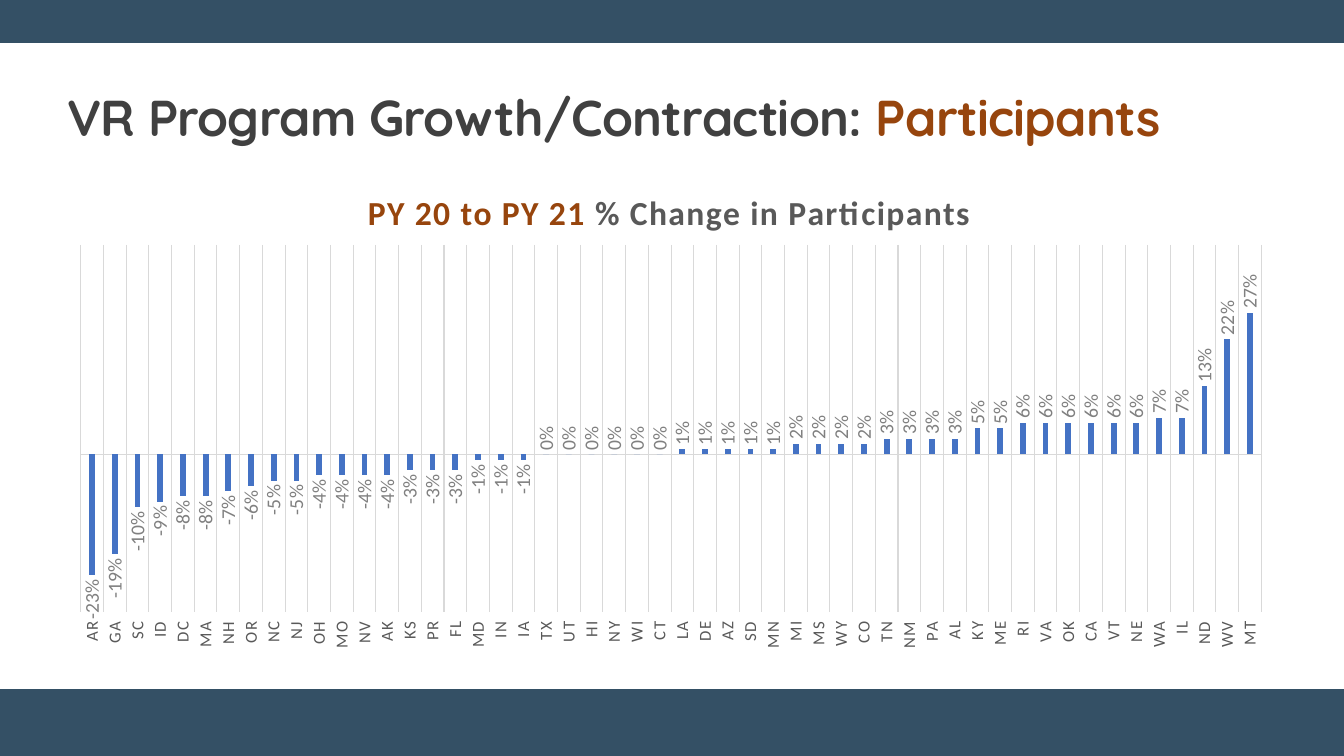
from lxml import etree
from pptx import Presentation
from pptx.chart.data import CategoryChartData
from pptx.dml.color import RGBColor
from pptx.enum.chart import XL_CHART_TYPE, XL_LABEL_POSITION, XL_TICK_LABEL_POSITION, XL_TICK_MARK
from pptx.enum.shapes import MSO_SHAPE
from pptx.oxml.ns import qn
from pptx.util import Pt

COLUMNS = XL_CHART_TYPE.COLUMN_CLUSTERED
OUTSIDE_END = XL_LABEL_POSITION.OUTSIDE_END
LOW = XL_TICK_LABEL_POSITION.LOW
NO_TICK = XL_TICK_MARK.NONE
RECTANGLE = MSO_SHAPE.RECTANGLE

COLORS = {"band": "345065", "heading": "404040", "accent": "97450D", "text": "595959",
          "label": "808080", "grid": "D9D9D9", "bar": "4472C4", "black": "000000"}
WIDTH, HEIGHT = 960, 540

STATES = ("AR GA SC ID DC MA NH OR NC NJ OH MO NV AK KS PR FL MD IN IA TX UT HI NY WI CT "
          "LA DE AZ SD MN MI MS WY CO TN NM PA AL KY ME RI VA OK CA VT NE WA IL ND WV MT").split()
PERCENT_CHANGES = [-23, -19, -10, -9, -8, -8, -7, -6, -5, -5, -4, -4, -4, -4, -3, -3, -3,
                   -1, -1, -1, 0, 0, 0, 0, 0, 0, 1, 1, 1, 1, 1, 2, 2, 2, 2, 3, 3, 3, 3,
                   5, 5, 6, 6, 6, 6, 6, 6, 7, 7, 13, 22, 27]


def color(name):
    return RGBColor.from_string(COLORS[name])


def style_font(font, color_name, **values):
    for attribute, value in values.items():
        setattr(font, attribute, value)
    font.color.rgb = color(color_name)


def add_runs(paragraph, parts, spacing, **values):
    for words, color_name in parts:
        run = paragraph.add_run()
        run.text = words
        style_font(run.font, color_name, bold=True, **values)
        run.font._element.set("spc", str(spacing))


def style_line(line, color_name, width):
    line.color.rgb = color(color_name)
    line.width = Pt(width)


def make_layout(**fractions):
    """Manual chart layout; fractions are of the chart's size."""
    layout = etree.Element(qn("c:layout"))
    manual = etree.SubElement(layout, qn("c:manualLayout"))
    for tag, value in fractions.items():
        etree.SubElement(manual, qn("c:" + tag)).set("val", str(value))
    return layout


def turn_upright(element):
    body = element.find(qn("c:txPr")).find(qn("a:bodyPr"))
    body.set("rot", "-5400000")
    body.set("vert", "horz")


def add_band(slide, left, top, width, height):
    band = slide.shapes.add_shape(RECTANGLE, Pt(left), Pt(top), Pt(width), Pt(height))
    band.shadow.inherit = False
    band.fill.solid()
    band.fill.fore_color.rgb = color("band")
    style_line(band.line, "band", 1)


def add_heading(slide, left, top, width, height):
    frame = slide.shapes.add_textbox(Pt(left), Pt(top), Pt(width), Pt(height)).text_frame
    frame.word_wrap = True
    frame.margin_top = Pt(44)
    heading = frame.paragraphs[0]
    heading.line_spacing = 0.9
    add_runs(heading, [("VR Program Growth/Contraction: ", "heading"),
                       ("Participants", "accent")], -50, size=Pt(36), name="Quicksand")


def add_change_chart(slide, left, top, width, height):
    data = CategoryChartData(number_format="0%")
    data.categories = STATES
    data.add_series("Series 1", [percent / 100 for percent in PERCENT_CHANGES])
    chart = slide.shapes.add_chart(COLUMNS, Pt(left), Pt(top), Pt(width), Pt(height), data).chart
    chart.has_legend = False
    style_font(chart.font, "black", size=Pt(10), name="Calibri")

    # Title
    title = chart.chart_title
    add_runs(title.text_frame.paragraphs[0],
             [("PY 20 to PY 21", "accent"), (" % Change in Participants", "text")],
             100, size=Pt(24), name="Calibri")
    title_element = title._element
    for automatic in title_element.findall(qn("c:layout")):
        title_element.remove(automatic)
    title_element.find(qn("c:tx")).addnext(
        make_layout(xMode="edge", yMode="edge", x=0.25, y=0.04))

    # Plot area
    plot_area = chart._chartSpace.chart.plotArea
    for automatic in plot_area.findall(qn("c:layout")):
        plot_area.remove(automatic)
    plot_area.insert(0, make_layout(layoutTarget="inner", xMode="edge", yMode="edge",
                                    x=0.019, y=0.154, w=0.96, h=0.749))

    # Axes
    states = chart.category_axis
    states.tick_label_position = LOW
    states.major_tick_mark = states.minor_tick_mark = NO_TICK
    states.has_major_gridlines = True
    for line in (states.format.line, states.major_gridlines.format.line):
        style_line(line, "grid", 0.75)
    style_font(states.tick_labels.font, "text", size=Pt(12), name="Calibri")
    states.tick_labels.font._element.set("spc", "100")
    turn_upright(states._element)
    change = chart.value_axis
    change.minimum_scale, change.maximum_scale = -0.3, 0.4
    change.has_major_gridlines = False
    change.tick_labels.number_format = "0%"
    change.tick_labels.number_format_is_linked = False
    change.visible = False

    # Bars and their labels
    plot = chart.plots[0]
    plot.gap_width, plot.overlap, plot.vary_by_categories = 294, -90, False
    bars = plot.series[0]
    bars.invert_if_negative = False
    bars.format.fill.solid()
    bars.format.fill.fore_color.rgb = color("bar")
    labels = bars.data_labels
    for attribute, value in {"show_value": True, "position": OUTSIDE_END, "number_format": "0%",
                             "number_format_is_linked": False}.items():
        setattr(labels, attribute, value)
    style_font(labels.font, "label", size=Pt(14), name="Calibri")
    turn_upright(labels._element)


def main():
    deck = Presentation()
    deck.slide_width, deck.slide_height = Pt(WIDTH), Pt(HEIGHT)
    slide = deck.slides.add_slide(deck.slide_layouts[6])
    add_band(slide, 0, 493, WIDTH, HEIGHT - 493)
    add_band(slide, 0, 0, WIDTH, 30.5)
    add_heading(slide, 41, 22.3, 878.4, 460)
    add_change_chart(slide, 41, 121, 878.4, 350)
    deck.save("out.pptx")


if __name__ == "__main__":
    main()
